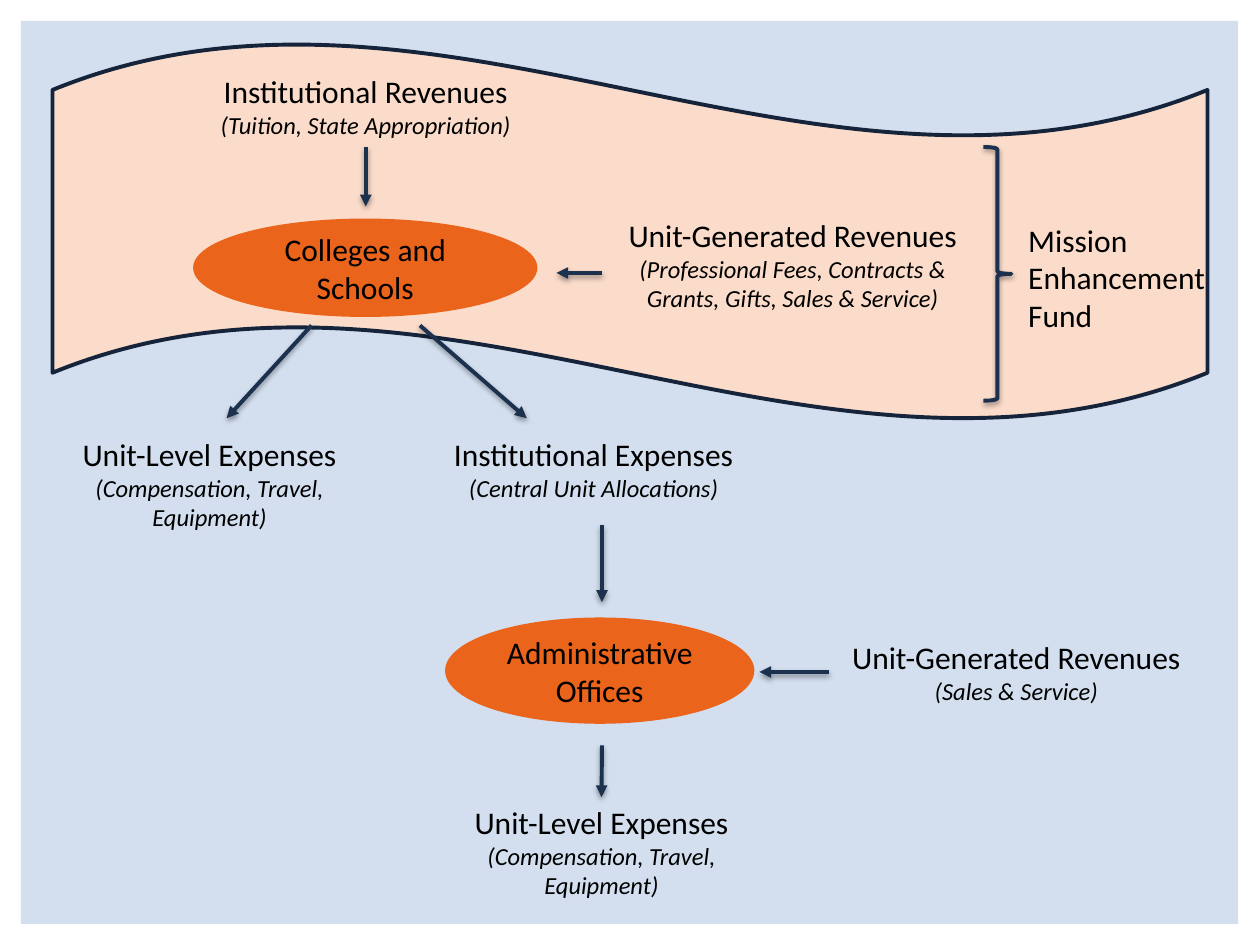
from lxml.etree import SubElement
from pptx import Presentation
from pptx.dml.color import RGBColor
from pptx.enum.shapes import MSO_CONNECTOR, MSO_SHAPE
from pptx.enum.text import MSO_ANCHOR, MSO_AUTO_SIZE, PP_ALIGN
from pptx.oxml import parse_xml
from pptx.oxml.ns import nsdecls, qn
from pptx.util import Pt

FONT = "Calibri"
BLACK = RGBColor(0x00, 0x00, 0x00)
PANEL_BLUE = RGBColor(0xD3, 0xDF, 0xEF)
WAVE_PEACH = RGBColor(0xFB, 0xDC, 0xCB)
WAVE_OUTLINE = RGBColor(0x15, 0x24, 0x3A)
ARROW_NAVY = RGBColor(0x1C, 0x31, 0x4E)
UNIT_ORANGE = RGBColor(0xEB, 0x64, 0x1B)
LINE_WIDTH = Pt(2.25)
HEADING_SIZE = Pt(18)
DETAIL_SIZE = Pt(14)
TOP, BOTTOM = 0, 2
EXPENSE_DETAIL = "(Compensation, Travel, Equipment)"


def add_soft_shadow(shape):
    shape._element.spPr.append(parse_xml(
        f'<a:effectLst {nsdecls("a")}>'
        f'<a:outerShdw blurRad="{Pt(3.1)}" dist="{Pt(1.6)}" dir="5400000" rotWithShape="0">'
        '<a:srgbClr val="000000"><a:alpha val="38000"/></a:srgbClr>'
        '</a:outerShdw></a:effectLst>'))


def format_paragraph(paragraph, size, alignment, italic=False):
    paragraph.alignment = alignment
    for run in paragraph.runs:
        run.font.name = FONT
        run.font.size = size
        run.font.italic = italic
        run.font.color.rgb = BLACK


def add_shape(slide, kind, left, top, width, height, fill=None, outline=None):
    shape = slide.shapes.add_shape(kind, Pt(left), Pt(top), Pt(width), Pt(height))
    if fill is None:
        shape.fill.background()
    else:
        shape.fill.solid()
        shape.fill.fore_color.rgb = fill
    if outline is None:
        shape.line.fill.background()
    else:
        shape.line.color.rgb = outline
        shape.line.width = LINE_WIDTH
    return shape


def add_flat_shape(slide, *geometry, **colors):
    shape = add_shape(slide, *geometry, **colors)
    shape.shadow.inherit = False
    return shape


def add_unit(slide, name, left, top, width, height):
    ellipse = add_flat_shape(slide, MSO_SHAPE.OVAL, left, top, width, height,
                             fill=UNIT_ORANGE, outline=UNIT_ORANGE)
    text_frame = ellipse.text_frame
    text_frame.text = name
    text_frame.word_wrap = True
    text_frame.vertical_anchor = MSO_ANCHOR.MIDDLE
    format_paragraph(text_frame.paragraphs[0], HEADING_SIZE, PP_ALIGN.CENTER)


def add_label(slide, heading, detail, left, top, width, height,
              alignment=PP_ALIGN.CENTER, wrap=True):
    box = slide.shapes.add_textbox(Pt(left), Pt(top), Pt(width), Pt(height))
    text_frame = box.text_frame
    text_frame.word_wrap = wrap
    text_frame.auto_size = MSO_AUTO_SIZE.SHAPE_TO_FIT_TEXT
    text_frame.text = heading
    format_paragraph(text_frame.paragraphs[0], HEADING_SIZE, alignment)
    if detail:
        paragraph = text_frame.add_paragraph()
        paragraph.text = detail
        format_paragraph(paragraph, DETAIL_SIZE, alignment, italic=True)
    return box


def add_arrow(slide, start_x, start_y, end_x, end_y):
    arrow = slide.shapes.add_connector(MSO_CONNECTOR.STRAIGHT, Pt(start_x), Pt(start_y),
                                       Pt(end_x), Pt(end_y))
    arrow.line.color.rgb = ARROW_NAVY
    arrow.line.width = LINE_WIDTH
    SubElement(arrow.line._get_or_add_ln(), qn("a:tailEnd"), type="triangle")
    add_soft_shadow(arrow)
    return arrow


def main():
    presentation = Presentation()
    presentation.slide_width = Pt(720)
    presentation.slide_height = Pt(540)
    slide = presentation.slides.add_slide(presentation.slide_layouts[6])

    add_flat_shape(slide, MSO_SHAPE.RECTANGLE, 12, 12, 695.5, 516, fill=PANEL_BLUE)
    add_flat_shape(slide, MSO_SHAPE.WAVE, 30, 24.5, 660, 215.5,
                   fill=WAVE_PEACH, outline=WAVE_OUTLINE)

    revenues = add_label(slide, "Institutional Revenues", "(Tuition, State Appropriation)",
                         118.5, 37.5, 181, 46.5, wrap=False)
    add_label(slide, "Unit-Generated Revenues",
              "(Professional Fees, Contracts & Grants, Gifts, Sales & Service)",
              348, 120, 210, 63.5)
    add_label(slide, "Unit-Level Expenses", EXPENSE_DETAIL, 20, 245, 199.5, 63.5)
    add_label(slide, "Institutional Expenses", "(Central Unit Allocations)",
              245, 245, 188.5, 46)
    add_label(slide, "Unit-Generated Revenues", "(Sales & Service)", 479, 361, 203.5, 46)
    office_expenses = add_label(slide, "Unit-Level Expenses", EXPENSE_DETAIL,
                                240, 455.5, 207.5, 63.5)

    brace = add_shape(slide, MSO_SHAPE.RIGHT_BRACE, 562, 84, 16, 145, outline=ARROW_NAVY)
    add_soft_shadow(brace)
    add_label(slide, "Mission Enhancement Fund", None, 580.5, 122.5, 144, 72.5,
              alignment=PP_ALIGN.LEFT)

    add_unit(slide, "Colleges and Schools", 111.5, 126, 194.5, 54)
    add_unit(slide, "Administrative Offices", 255.5, 354, 174.5, 58.5)

    revenue_arrow = add_arrow(slide, 209, 84, 209, 118)
    revenue_arrow.begin_connect(revenues, BOTTOM)
    add_arrow(slide, 344, 156, 318, 156)
    add_arrow(slide, 178, 186, 129.5, 239)
    add_arrow(slide, 240, 186, 301, 239)
    add_arrow(slide, 344, 300, 344, 344)
    add_arrow(slide, 474, 384, 434, 384)
    expense_arrow = add_arrow(slide, 344, 426, 344, 455.5)
    expense_arrow.end_connect(office_expenses, TOP)

    presentation.save("out.pptx")


if __name__ == "__main__":
    main()
